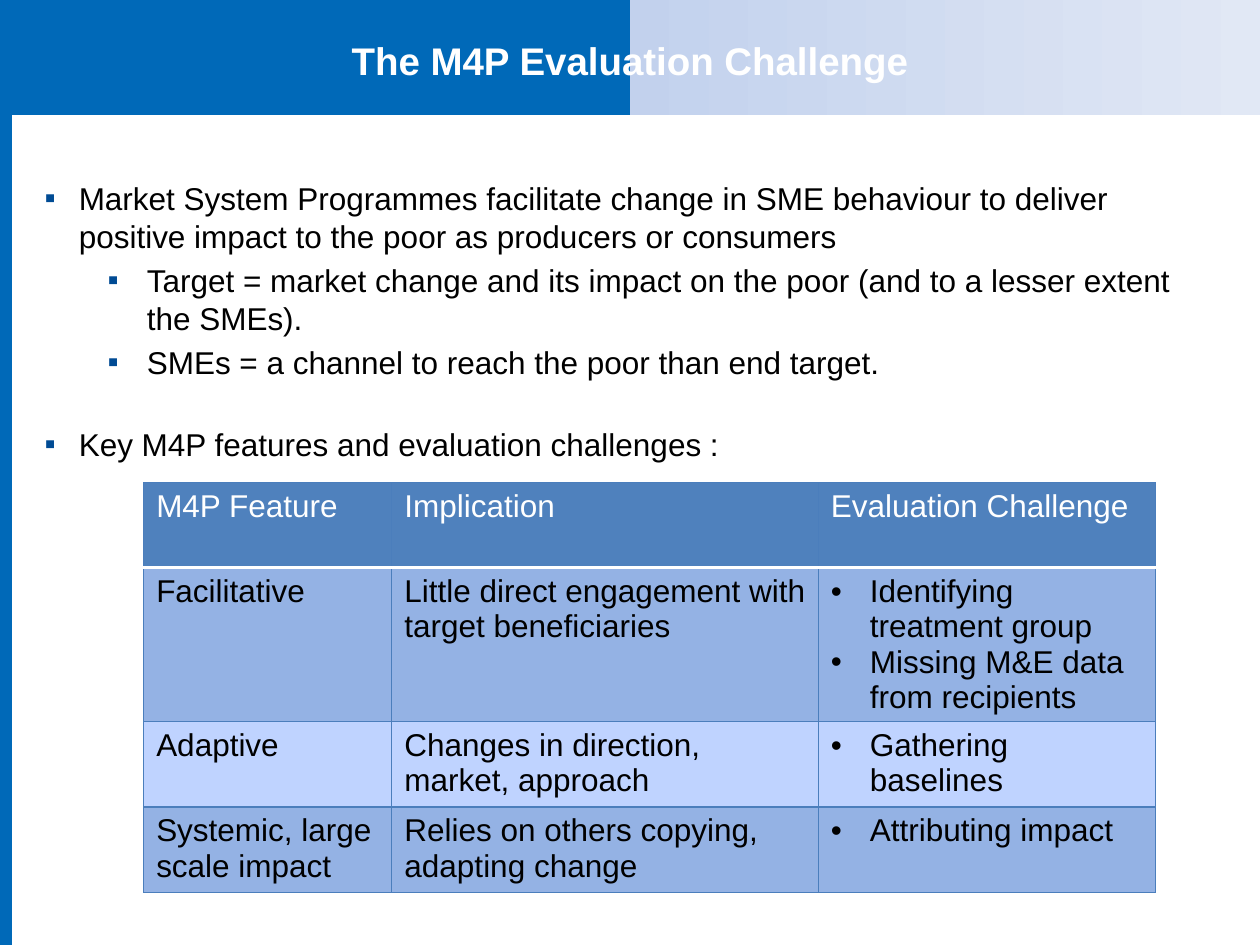
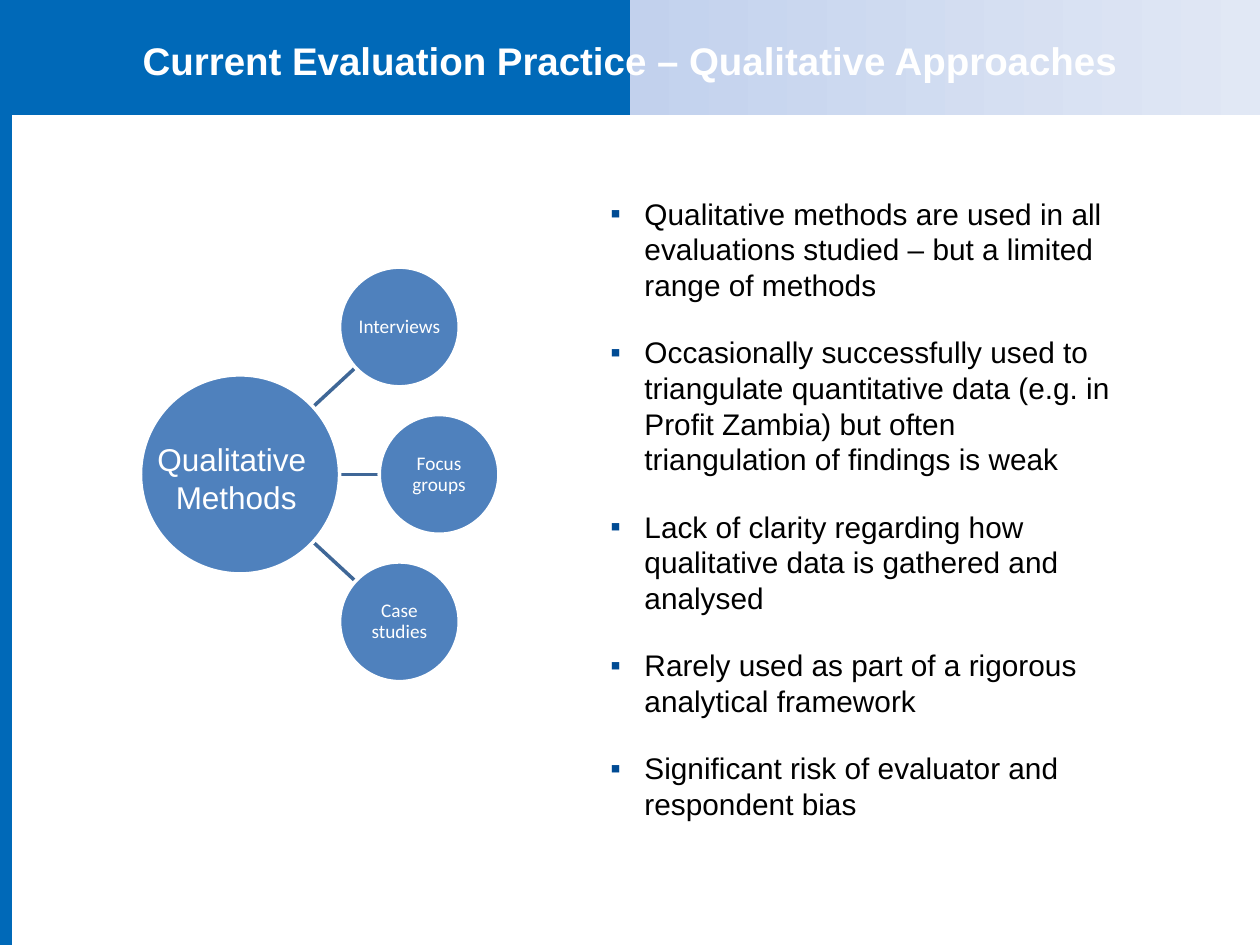
"""Builds two slides on evaluating M4P market programmes."""
from dataclasses import dataclass
from math import hypot

from lxml.etree import SubElement
from pptx import Presentation
from pptx.dml.color import RGBColor as RGB
from pptx.enum.shapes import MSO_CONNECTOR as Link, MSO_SHAPE as Shape
from pptx.enum.text import MSO_ANCHOR as Anchor, MSO_AUTO_SIZE as Fit, PP_ALIGN as Align
from pptx.oxml.ns import qn
from pptx.util import Inches, Pt

COLUMNS, ROWS = 100, 75


@dataclass(frozen=True)
class Theme:
    """Colours, fonts and type sizes of the deck."""
    band: str = "0069B8"
    fade_start: str = "C2D1ED"
    fade_end: str = "E1E8F5"
    bullet: str = "004B94"
    accent: str = "4F81BD"
    border: str = "4B7EBC"
    spoke: str = "3F6797"
    row_dark: str = "94B2E4"
    row_light: str = "BFD3FF"
    ink: str = "000000"
    white: str = "FFFFFF"
    font: str = "Arial"
    node_font: str = "Calibri"
    title: int = 22
    text: int = 18
    side_text: int = 17
    node: int = 11


def add_color(parent, color):
    """Append an RGB colour element."""
    SubElement(parent, qn("a:srgbClr"), val=color)


def write(p, text, size=18, color="000000", font="Arial", bold=False, align=None,
          before=0, after=0, spacing=None, indent=None, bullet=None, bullet_color=None):
    """Fill a paragraph with one formatted run."""
    p.alignment = align
    p.space_before, p.space_after = Pt(before), Pt(after)
    if spacing:
        p.line_spacing = spacing
    if bullet:
        left, hang = indent
        ppr = p._p.get_or_add_pPr()
        ppr.set("marL", str(Inches(left)))
        ppr.set("indent", str(-Inches(hang)))
        if bullet_color:
            add_color(SubElement(ppr, qn("a:buClr")), bullet_color)
        SubElement(ppr, qn("a:buFont"), typeface="Arial")
        SubElement(ppr, qn("a:buChar"), char=bullet)
    r = p.add_run()
    r.text = text
    r.font.size, r.font.name, r.font.bold = Pt(size), font, bold
    r.font.color.rgb = RGB.from_string(color)


def paragraphs(tf, count):
    """Yield the first paragraph of a frame and then new ones."""
    for i in range(count):
        yield tf.add_paragraph() if i else tf.paragraphs[0]


class Deck:
    """Holds the theme, the presentation and the current slide."""

    def __init__(self, theme):
        self.theme = theme
        self.prs = Presentation()
        self.prs.slide_width, self.prs.slide_height = Inches(10), Inches(7.5)
        self.slide = None

    def x(self, columns):
        """Turn grid columns into a length."""
        return int(self.prs.slide_width * columns / COLUMNS)

    def y(self, rows):
        """Turn grid rows into a length."""
        return int(self.prs.slide_height * rows / ROWS)

    def box(self, left, top, width, height):
        """Turn a grid box into lengths."""
        return self.x(left), self.y(top), self.x(width), self.y(height)

    def place(self, sp, *box):
        """Move a placeholder to a grid box."""
        sp.left, sp.top, sp.width, sp.height = self.box(*box)

    def shape(self, kind, box, fill, line=None):
        """Add a flat preset shape."""
        sp = self.slide.shapes.add_shape(kind, *self.box(*box))
        sp.shadow.inherit = False
        sp.fill.solid()
        sp.fill.fore_color.rgb = RGB.from_string(fill)
        if line:
            sp.line.color.rgb = RGB.from_string(line)
            sp.line.width = Pt(2)
        else:
            sp.line.fill.background()
        return sp

    def master_stripe(self):
        """Put the left stripe on the master."""
        stripe = self.shape(Shape.RECTANGLE, (0, 0, 0.95, ROWS), self.theme.band)
        self.prs.slide_master.shapes.element.insert(2, stripe.element)

    def new_slide(self, title):
        """Start a slide with its gradient title band."""
        t = self.theme
        self.slide = self.prs.slides.add_slide(self.prs.slide_layouts[1])
        sp = self.slide.shapes.title
        self.place(sp, 0, 0, COLUMNS, 9.1)
        grad = SubElement(sp.element.spPr, qn("a:gradFill"))
        stops = SubElement(grad, qn("a:gsLst"))
        for percent, color in ((50, t.band), (50, t.fade_start), (100, t.fade_end)):
            add_color(SubElement(stops, qn("a:gs"), pos=str(percent * 1000)), color)
        SubElement(grad, qn("a:lin"), ang="0", scaled="0")
        tf = sp.text_frame
        tf.auto_size, tf.vertical_anchor = Fit.NONE, Anchor.MIDDLE
        tf.margin_left = tf.margin_right = Inches(0.2)
        tf.margin_top, tf.margin_bottom = Inches(0.12), Inches(0.08)
        write(tf.paragraphs[0], title, t.title, t.white, t.font, True, Align.CENTER)

    def body(self, box, items, size, after=0):
        """Fill the body placeholder from (level, space before, text) items."""
        t = self.theme
        sp = self.slide.placeholders[1]
        self.place(sp, *box)
        tf = sp.text_frame
        tf.auto_size, tf.word_wrap = Fit.NONE, True
        tf.margin_left = tf.margin_right = tf.margin_top = tf.margin_bottom = 0
        for p, (level, before, text) in zip(paragraphs(tf, len(items)), items):
            p.level = level
            write(p, text, size, t.ink, t.font, before=before, after=after,
                  indent=((0.27, 0.27), (0.81, 0.31))[level],
                  bullet="▪", bullet_color=t.bullet)

    def borders(self, cell, **widths_and_colors):
        """Draw the four sides of a cell; keywords override the thin line."""
        tcpr = cell._tc.get_or_add_tcPr()
        for side in "LRTB":
            width, color = widths_and_colors.get(side, (0.75, self.theme.border))
            ln = SubElement(tcpr, qn(f"a:ln{side}"), w=str(Pt(width)))
            add_color(SubElement(ln, qn("a:solidFill")), color)

    def table(self, left, top, widths, heights, rows):
        """Add a banded table; a list in a cell becomes bullets."""
        t = self.theme
        box = self.box(left, top, sum(widths), sum(heights))
        table = self.slide.shapes.add_table(len(rows), len(widths), *box).table
        for column, width in zip(table.columns, widths):
            column.width = self.x(width)
        rule = (2, t.white)
        for i, (row, height) in enumerate(zip(rows, heights)):
            table.rows[i].height = self.y(height)
            fill = t.accent if i == 0 else t.row_dark if i % 2 else t.row_light
            for j, content in enumerate(row):
                cell = table.cell(i, j)
                self.borders(cell, **({"B": rule} if i == 0 else {"T": rule} if i == 1 else {}))
                cell.fill.solid()
                cell.fill.fore_color.rgb = RGB.from_string(fill)
                listed = isinstance(content, list)
                lines = content if listed else [content]
                for p, line in zip(paragraphs(cell.text_frame, len(lines)), lines):
                    write(p, line, t.text, t.ink if i else t.white, t.font,
                          indent=(0.31, 0.31), bullet="•" if listed else None)

    def node(self, center, radius, lines, wrap=True, right=0.01, top=0.01, **fmt):
        """Add a labelled circle."""
        cx, cy = center
        box = (cx - radius, cy - radius, 2 * radius, 2 * radius)
        sp = self.shape(Shape.OVAL, box, self.theme.accent, self.theme.white)
        tf = sp.text_frame
        tf.word_wrap, tf.vertical_anchor = wrap, Anchor.MIDDLE
        tf.margin_left = tf.margin_bottom = Inches(0.01)
        tf.margin_right, tf.margin_top = Inches(right), Inches(top)
        for p, line in zip(paragraphs(tf, len(lines)), lines):
            write(p, line, color=self.theme.white, align=Align.CENTER, **fmt)

    def spoke(self, start, offset, end, end_radius):
        """Run from an offset beside one centre to the rim of another circle."""
        dx, dy = end[0] - start[0], end[1] - start[1]
        a, b = offset / dx, 1 - end_radius / hypot(dx, dy)
        line = self.slide.shapes.add_connector(
            Link.STRAIGHT, self.x(start[0] + a * dx), self.y(start[1] + a * dy),
            self.x(start[0] + b * dx), self.y(start[1] + b * dy))
        line.line.color.rgb = RGB.from_string(self.theme.spoke)
        line.line.width = Pt(2)
        SubElement(line.element.spPr, qn("a:effectLst"))

    def hub(self, center, radius, lines, satellites, satellite_radius, spoke_offset):
        """Draw a hub circle with spokes to smaller circles."""
        t = self.theme
        for spot, _ in satellites:
            self.spoke(center, spoke_offset, spot, satellite_radius)
        self.node(center, radius, lines, wrap=False, right=0.07, top=0.06,
                  size=t.text, font=t.font)
        for spot, label in satellites:
            self.node(spot, satellite_radius, [label],
                      size=t.node, font=t.node_font, spacing=0.9)


def main():
    """Build and save the deck."""
    theme = Theme()
    deck = Deck(theme)

    deck.new_slide("The M4P Evaluation Challenge")
    deck.master_stripe()
    deck.body((3.55, 14.2, 90.6, 23), [
        (0, 0, "Market System Programmes facilitate change in SME behaviour to deliver "
               "positive impact to the poor as producers or consumers"),
        (1, 3.6, "Target = market change and its impact on the poor (and to a lesser "
                 "extent the SMEs)."),
        (1, 3.6, "SMEs = a channel to reach the poor than end target."),
        (0, 25.3, "Key M4P features and evaluation challenges :"),
    ], theme.text)
    deck.table(11.4, 38.3, (19.7, 33.85, 26.75), (6.75, 12.2, 6.8, 6.8), [
        ("M4P Feature", "Implication", "Evaluation Challenge"),
        ("Facilitative", "Little direct engagement with target beneficiaries",
         ["Identifying treatment group", "Missing M&E data from recipients"]),
        ("Adaptive", "Changes in direction, market, approach", ["Gathering baselines"]),
        ("Systemic, large scale impact", "Relies on others copying, adapting change",
         ["Attributing impact"]),
    ])

    deck.new_slide("Current Evaluation Practice – Qualitative Approaches")
    findings = (
        "Qualitative methods are used in all evaluations studied – but a limited range of methods",
        "Occasionally successfully used to triangulate quantitative data (e.g. in Profit Zambia) "
        "but often triangulation of findings is weak",
        "Lack of clarity regarding how qualitative data is gathered and analysed",
        "Rarely used as part of a rigorous analytical framework",
        "Significant risk of evaluator and respondent bias",
    )
    deck.body((48.45, 15.5, 40.4, 50.4),
              [(0, 12 if i else 0, text) for i, text in enumerate(findings)],
              theme.side_text, after=6)
    middle, rise = 37.65, 11.7
    deck.hub((19.05, middle), 7.9, ["Qualitative ", "Methods"], [
        ((31.7, middle - rise), "Interviews"),
        ((34.85, middle), "Focus groups"),
        ((31.7, middle + rise), "Case studies"),
    ], 4.75, 5.5)
    deck.prs.save("out.pptx")


if __name__ == "__main__":
    main()
